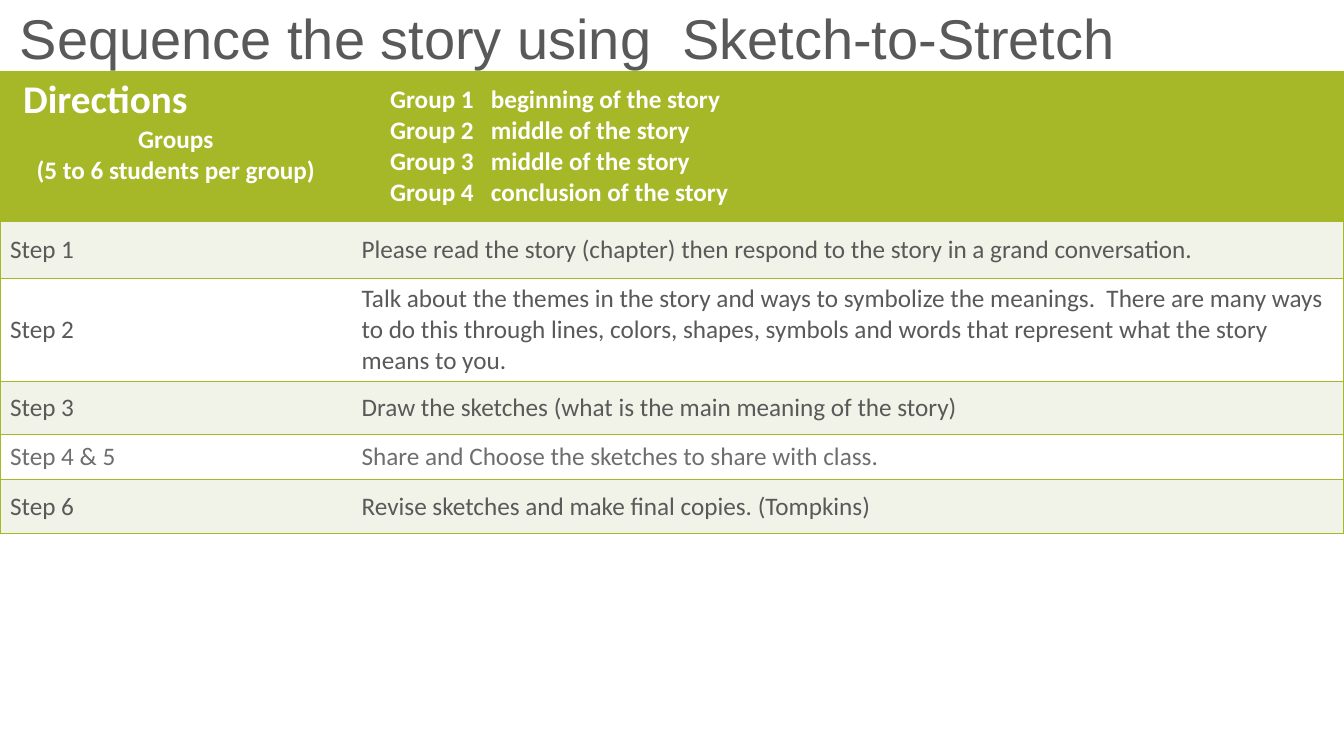
from dataclasses import dataclass

from lxml import etree
from pptx import Presentation
from pptx import util as u
from pptx.dml.color import RGBColor
from pptx.enum import text
from pptx.oxml.ns import qn


@dataclass(frozen=True)
class Theme:
    green: str = "A6B727"
    pale: str = "F1F3E8"
    white: str = "FFFFFF"
    ink: str = "595959"
    muted: str = "6E6E6E"
    title_font: str = "Arial"
    body_font: str = "Calibri"
    title_size: int = 40
    heading_size: int = 28
    body_size: int = 18
    border: float = 1


class StorySlide:
    def __init__(self, deck, theme):
        self.theme = theme
        self.slide = deck.slides.add_slide(deck.slide_layouts[6])

    def style(self, frame, font, size, color, bold=False):
        for paragraph in frame.paragraphs:
            for run in paragraph.runs:
                run.font.name = font
                run.font.size = u.Pt(size)
                run.font.bold = bold
                run.font.color.rgb = RGBColor.from_string(color)

    def title(self, wording, left, top, width, height):
        box = self.slide.shapes.add_textbox(*map(u.Cm, (left, top, width, height)))
        frame = box.text_frame
        frame.word_wrap = True
        frame.vertical_anchor = text.MSO_ANCHOR.BOTTOM
        frame.text = wording
        frame.paragraphs[0].line_spacing = 0.9
        self.style(frame, self.theme.title_font, self.theme.title_size, self.theme.ink)

    def table(self, rows, left, top, widths, heights):
        frame = self.slide.shapes.add_table(
            len(rows), len(widths), *map(u.Cm, (left, top, sum(widths), sum(heights))))
        grid = frame.table
        grid.first_row = grid.horz_banding = False
        for column, width in zip(grid.columns, widths):
            column.width = u.Cm(width)
        for row, height, (wordings, fill, color, bold) in zip(grid.rows, heights, rows):
            row.height = u.Cm(height)
            for index, (cell, wording) in enumerate(zip(row.cells, wordings)):
                self.borders(cell, index == 0, index == len(widths) - 1)
                cell.fill.solid()
                cell.fill.fore_color.rgb = RGBColor.from_string(fill)
                cell.vertical_anchor = text.MSO_ANCHOR.MIDDLE
                cell.text_frame.text = wording
                self.style(cell.text_frame, self.theme.body_font,
                           self.theme.body_size, color, bold)
        return grid

    def borders(self, cell, first, last):
        properties = cell._tc.get_or_add_tcPr()
        for side, visible in (("L", first), ("R", last), ("T", True), ("B", True)):
            line = etree.SubElement(properties, qn(f"a:ln{side}"),
                                    w=str(u.Pt(self.theme.border)))
            if visible:
                fill = etree.SubElement(line, qn("a:solidFill"))
                etree.SubElement(fill, qn("a:srgbClr"), val=self.theme.green)
            else:
                etree.SubElement(line, qn("a:noFill"))

    def directions(self, cell):
        cell.vertical_anchor = text.MSO_ANCHOR.TOP
        heading, *details = cell.text_frame.paragraphs
        heading.runs[0].font.size = u.Pt(self.theme.heading_size)
        heading._p.get_or_add_pPr().set("marL", str(u.Cm(0.33)))
        for detail in details:
            detail.alignment = text.PP_ALIGN.CENTER

    def groups(self, cell):
        cell.margin_left = u.Cm(0.97)
        for paragraph in cell.text_frame.paragraphs:
            tabs = etree.SubElement(paragraph._p.get_or_add_pPr(), qn("a:tabLst"))
            etree.SubElement(tabs, qn("a:tab"), pos=str(u.Cm(2.54)), algn="l")


def main():
    deck = Presentation()
    deck.slide_width, deck.slide_height = u.Cm(33.87), u.Cm(19.05)
    theme = Theme()
    story = StorySlide(deck, theme)
    story.title("Sequence the story using  Sketch-to-Stretch", 0.25, 0, 33.3, 1.93)

    parts = ("beginning", "middle", "middle", "conclusion")
    groups = "\n".join(f"Group {number}\t{part} of the story"
                       for number, part in enumerate(parts, 1))
    widths = (8.86, 25.01)
    opening = story.table([
        (("Directions\nGroups\n(5 to 6 students per group)", groups),
         theme.green, theme.white, True),
        (("Step 1", "Please read the story (chapter) then respond to the story "
          "in a grand conversation."), theme.pale, theme.ink, False),
        (("Step 2", "Talk about the themes in the story and ways to symbolize the "
          "meanings.  There are many ways to do this through lines, colors, shapes, "
          "symbols and words that represent what the story means to you."),
         theme.white, theme.ink, False),
        (("Step 3", "Draw the sketches (what is the main meaning of the story)"),
         theme.pale, theme.ink, False),
    ], 0, 1.8, widths, (3.78, 1.44, 2.59, 1.34))
    story.directions(opening.cell(0, 0))
    story.groups(opening.cell(0, 1))

    story.table([
        (("Step 4 & 5", "Share and Choose the sketches to share with class."),
         theme.white, theme.muted, False),
        (("Step 6", "Revise sketches and make final copies. (Tompkins)"),
         theme.pale, theme.ink, False),
    ], 0, 10.95, widths, (1.14, 1.35))
    deck.save("out.pptx")


if __name__ == "__main__":
    main()
